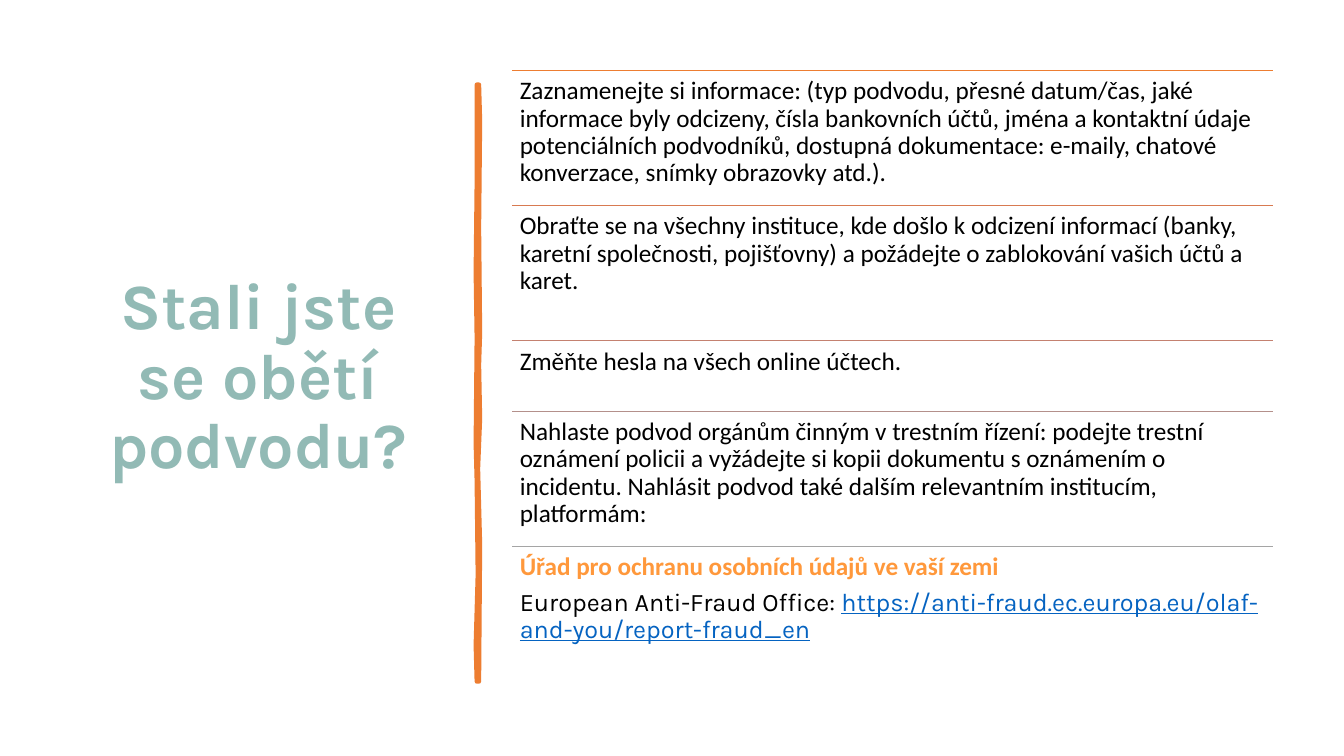
"""Builds the slide on what to do after becoming a victim of fraud."""
import pptx
import pptx.dml.color
import pptx.enum.shapes
import pptx.enum.text
import pptx.oxml
import pptx.util
from pptx.util import Inches


def colour(hex_string):
    return pptx.dml.color.RGBColor.from_string(hex_string)


def add_run(paragraph, text, size, font, hex_string, bold=False, underline=False):
    run = paragraph.add_run()
    run.text = text
    run.font.size = pptx.util.Pt(size)
    run.font.name = font
    run.font.bold = bold
    run.font.underline = underline
    run.font.color.rgb = colour(hex_string)


presentation = pptx.Presentation()
presentation.slide_width = Inches(13.33)
presentation.slide_height = Inches(7.5)
slide = presentation.slides.add_slide(presentation.slide_layouts[5])

question = slide.shapes.title
question.left, question.top = Inches(0.69), Inches(0.7)
question.width, question.height = Inches(3.74), Inches(6.11)
question.text_frame.word_wrap = True
question.text_frame.auto_size = pptx.enum.text.MSO_AUTO_SIZE.NONE
question.text_frame.vertical_anchor = pptx.enum.text.MSO_ANCHOR.MIDDLE
heading = question.text_frame.paragraphs[0]
heading.alignment = pptx.enum.text.PP_ALIGN.CENTER
heading.line_spacing = 0.9
heading.space_after = pptx.util.Pt(6)
add_run(heading, "Stali jste se obětí podvodu?", 46, "Karla", "92BAB5", bold=True)

right_edge = [(4.75, 0.84), (4.76, 1.2), (4.75, 2.26), (4.76, 3.3), (4.75, 3.62),
              (4.76, 4.15), (4.74, 4.65), (4.76, 5.4), (4.75, 6.76)]
left_edge = [(4.73, 6.76), (4.72, 6.4), (4.74, 5.7), (4.73, 4.77), (4.72, 4.4),
             (4.73, 3.35), (4.72, 2.7), (4.73, 1.81), (4.73, 0.84)]
outline = [(Inches(x), Inches(y)) for x, y in right_edge + left_edge]
brush = slide.shapes.build_freeform(*outline[0], scale=1.0)
brush.add_line_segments(outline[1:], close=True)
divider = brush.convert_to_shape()
divider.shadow.inherit = False
divider.fill.solid()
divider.fill.fore_color.rgb = colour("ED7D31")
divider.line.color.rgb = colour("ED7D31")
divider.line.width = pptx.util.Pt(3.25)

BLACK = ("Calibri", "000000")
steps = [
    ("ED7D31", 1.34, [[(
        "Zaznamenejte si informace: (typ podvodu, přesné datum/čas, jaké informace byly "
        "odcizeny, čísla bankovních účtů, jména a kontaktní údaje potenciálních podvodníků, "
        "dostupná dokumentace: e-maily, chatové konverzace, snímky obrazovky atd.).", *BLACK)]]),
    ("D87A51", 1.34, [[(
        "Obraťte se na všechny instituce, kde došlo k odcizení informací (banky, karetní "
        "společnosti, pojišťovny) a požádejte o zablokování vašich účtů a karet.", *BLACK)]]),
    ("C48170", 0.7, [[("Změňte hesla na všech online účtech.", *BLACK)]]),
    ("B4908B", 1.34, [[(
        "Nahlaste podvod orgánům činným v trestním řízení: podejte trestní oznámení policii "
        "a vyžádejte si kopii dokumentu s oznámením o incidentu. Nahlásit podvod také dalším "
        "relevantním institucím, platformám:", *BLACK)]]),
    ("A5A5A5", 1.34, [
        [("Úřad pro ochranu osobních údajů ve vaší zemi", "Calibri", "FF983B", True)],
        [("European Anti-Fraud Office: ", "Karla", "000000"),
         ("https://anti-fraud.ec.europa.eu/olaf-and-you/report-fraud_en",
          "Karla", "0563C1", False, True)]]),
]

left, width, top = 5.08, 7.55, 0.7
inset = pptx.util.Pt(5.4)
advice_list = slide.shapes.add_group_shape()
for rule_colour, height, paragraphs in steps:
    rule = advice_list.shapes.add_connector(
        pptx.enum.shapes.MSO_CONNECTOR.STRAIGHT,
        Inches(left), Inches(top), Inches(left + width), Inches(top))
    rule.line.color.rgb = colour(rule_colour)
    rule.line.width = pptx.util.Pt(1)
    rule._element.spPr.append(pptx.oxml.parse_xml(
        '<a:effectLst xmlns:a="http://schemas.openxmlformats.org/drawingml/2006/main"/>'))

    advice = advice_list.shapes.add_textbox(
        Inches(left), Inches(top), Inches(width), Inches(height)).text_frame
    advice.word_wrap = True
    advice.margin_left = advice.margin_right = inset
    advice.margin_top = advice.margin_bottom = inset
    for index, runs in enumerate(paragraphs):
        paragraph = advice.add_paragraph() if index else advice.paragraphs[0]
        paragraph.line_spacing = 0.9
        paragraph.space_after = pptx.util.Pt(6.3)
        for text, font, *style in runs:
            add_run(paragraph, text, 18, font, *style)
    top += height

presentation.save("out.pptx")
